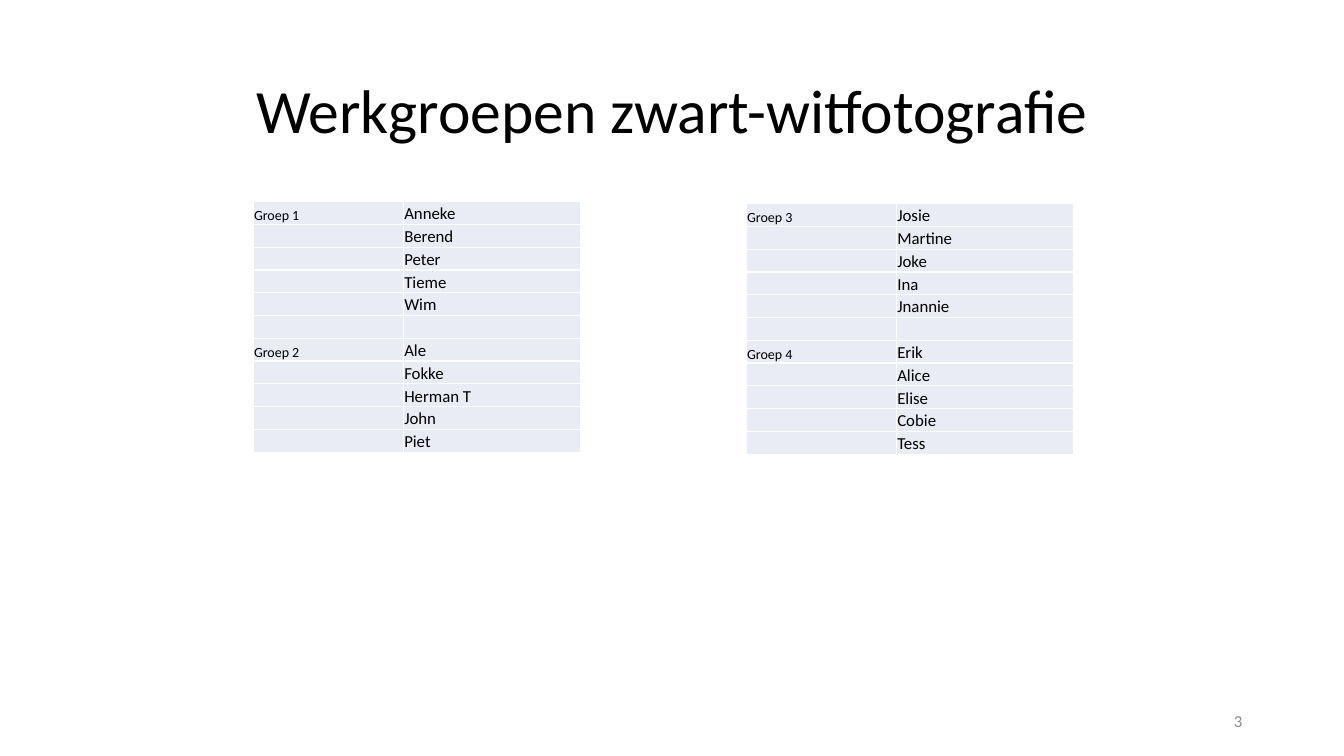
from pptx import Presentation
from pptx.dml.color import RGBColor
from pptx.enum.text import MSO_ANCHOR, PP_ALIGN
from pptx.util import Inches, Pt


def colour(hex_value):
    return RGBColor.from_string(hex_value)


class WorkgroupSlide:
    font_name = "Calibri"
    ink = "000000"
    muted = "8C8C8C"
    cell_fill = "E9EBF5"

    def __init__(self, presentation):
        self.slide = presentation.slides.add_slide(presentation.slide_layouts[5])

    def style(self, paragraph, size, hex_value, align):
        paragraph.alignment = align
        paragraph.font.name = self.font_name
        paragraph.font.size = Pt(size)
        paragraph.font.color.rgb = colour(hex_value)

    def place_text(self, holder, text, box, size, hex_value, align):
        holder.left, holder.top, holder.width, holder.height = map(Inches, box)
        frame = holder.text_frame
        frame.text = text
        frame.word_wrap = True
        frame.vertical_anchor = MSO_ANCHOR.MIDDLE
        self.style(frame.paragraphs[0], size, hex_value, align)
        return frame.paragraphs[0]

    def title(self, text):
        heading = self.place_text(self.slide.shapes.title, text,
                                  (0.92, 0.4, 11.5, 1.45), 44, self.ink, PP_ALIGN.CENTER)
        heading.line_spacing = 0.9

    def page_number(self, text):
        box = (9.42, 6.95, 3, 0.4)
        holder = self.slide.shapes.add_textbox(*map(Inches, box))
        self.place_text(holder, text, box, 12, self.muted, PP_ALIGN.RIGHT)

    def cell(self, cell, text, size):
        cell.fill.solid()
        cell.fill.fore_color.rgb = colour(self.cell_fill)
        cell.vertical_anchor = MSO_ANCHOR.BOTTOM
        cell.margin_left = cell.margin_top = cell.margin_right = Inches(0.01)
        cell.margin_bottom = 0
        cell.text = text
        self.style(cell.text_frame.paragraphs[0], size, self.ink, PP_ALIGN.LEFT)

    def group_table(self, left, top, groups):
        rows = []
        for group, members in groups.items():
            if rows:
                rows.append(("", ""))
            rows += [(group if i == 0 else "", member) for i, member in enumerate(members)]
        table = self.slide.shapes.add_table(
            len(rows), 2, Inches(left), Inches(top), Inches(3.25), Inches(2.49)).table
        table.first_row = table.horz_banding = False
        for column, width in zip(table.columns, (1.49, 1.76)):
            column.width = Inches(width)
        for r, row in enumerate(rows):
            for c, (text, size) in enumerate(zip(row, (10, 12))):
                self.cell(table.cell(r, c), text, size)


def main():
    presentation = Presentation()
    presentation.slide_width = Inches(13.33)
    presentation.slide_height = Inches(7.5)
    workgroups = WorkgroupSlide(presentation)
    workgroups.title("Werkgroepen zwart-witfotografie")
    workgroups.page_number("3")
    workgroups.group_table(2.51, 2, {
        "Groep 1": ["Anneke", "Berend", "Peter", "Tieme", "Wim"],
        "Groep 2": ["Ale", "Fokke", "Herman T", "John", "Piet"],
    })
    workgroups.group_table(7.4, 2.02, {
        "Groep 3": ["Josie", "Martine", "Joke", "Ina", "Jnannie"],
        "Groep 4": ["Erik", "Alice", "Elise", "Cobie", "Tess"],
    })
    presentation.save("out.pptx")


if __name__ == "__main__":
    main()
